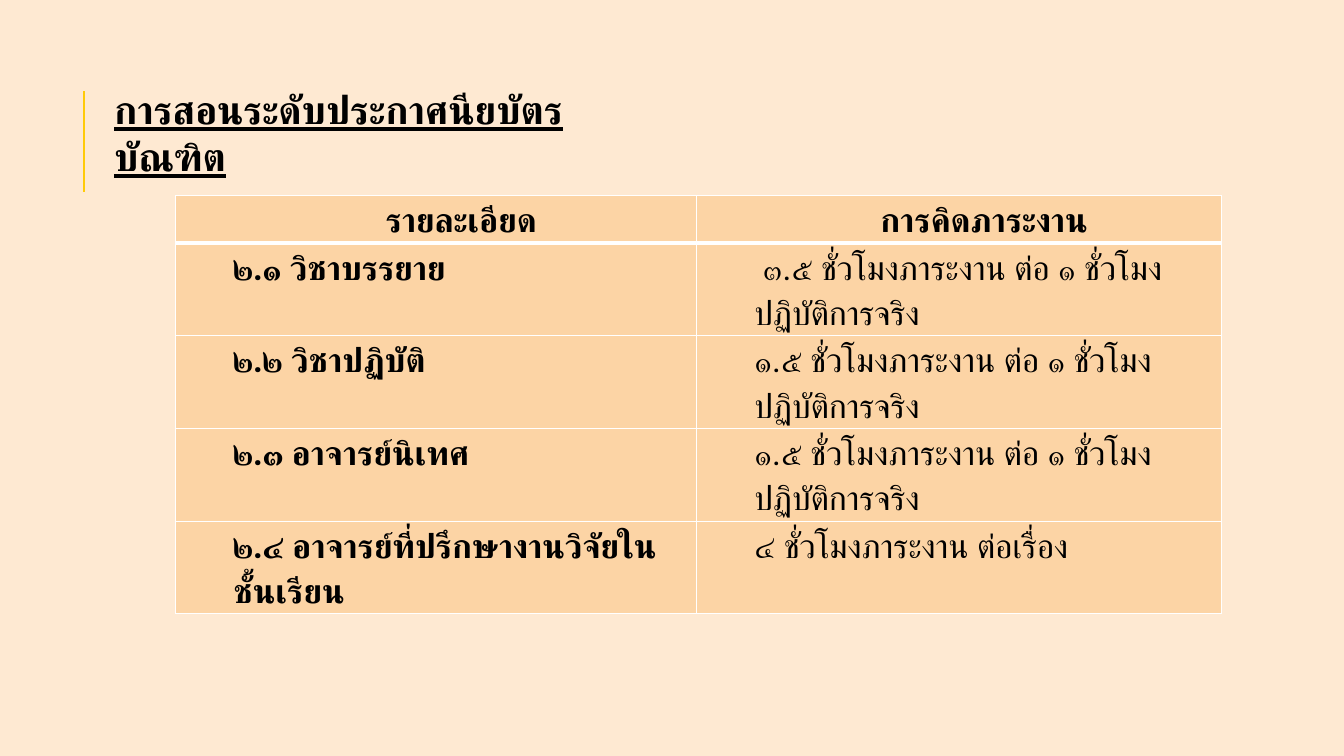
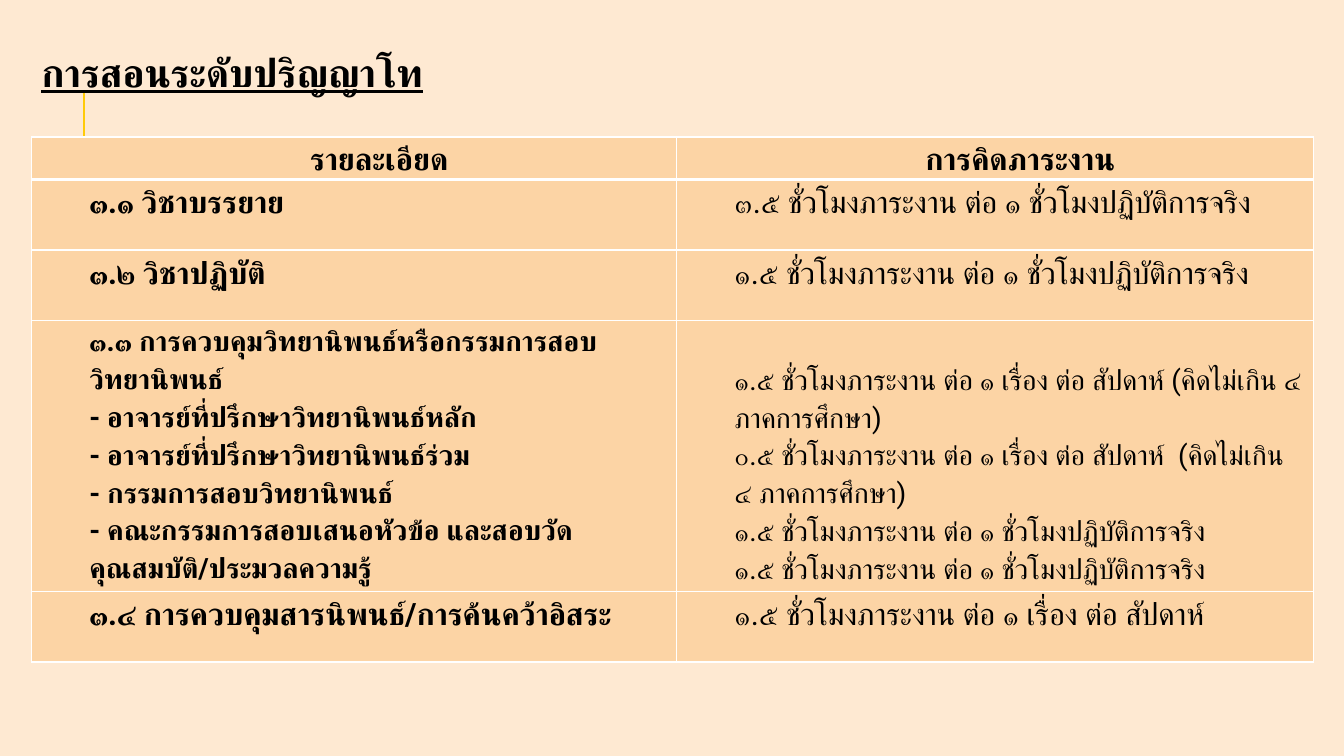
from lxml.etree import SubElement
from pptx import Presentation
from pptx.dml.color import RGBColor as Rgb
from pptx.enum.shapes import MSO_CONNECTOR as Connector
from pptx.enum.text import MSO_ANCHOR as Anchor, MSO_AUTO_SIZE as AutoSize, PP_ALIGN as Align
from pptx.oxml.ns import qn
from pptx.util import Cm, Pt

COLORS = {"page": "FEE9D2", "cell": "FCD4A5", "rule": "FFCA08", "border": "FFFFFF", "text": "000000"}
TITLE_FONT, TABLE_FONT = "Calibri", "Roboto"
HEADINGS = ("รายละเอียด", "การคิดภาระงาน")
PER_LECTURE = "๓.๕ ชั่วโมงภาระงาน ต่อ ๑ ชั่วโมงปฏิบัติการจริง"
PER_PRACTICE = "๑.๕ ชั่วโมงภาระงาน ต่อ ๑ ชั่วโมงปฏิบัติการจริง"
PER_TOPIC = "ชั่วโมงภาระงาน ต่อ ๑ เรื่อง ต่อ สัปดาห์"
TERM_LIMIT = "(คิดไม่เกิน ๔ ภาคการศึกษา)"

CERTIFICATE = {
    "title": "การสอนระดับประกาศนียบัตรบัณฑิต",
    "title_box": (2.62, 2.03, 13.03, 1.45),
    "table_at": (4.42, 4.93),
    "columns": (13.13, 13.23),
    "size": 24,
    "rows": [
        (1.19, *HEADINGS),
        (1.07, "๒.๑ วิชาบรรยาย", " " + PER_LECTURE),
        (1.14, "๒.๒ วิชาปฏิบัติ", PER_PRACTICE),
        (1.35, "๒.๓ อาจารย์นิเทศ", PER_PRACTICE),
        (1.14, "๒.๔ อาจารย์ที่ปรึกษางานวิจัยในชั้นเรียน", "๔ ชั่วโมงภาระงาน ต่อเรื่อง"),
    ],
}
MASTER_DEGREE = {
    "title": "การสอนระดับปริญญาโท",
    "title_box": (0.79, 1.09, 16.94, 1.45),
    "table_at": (0.79, 3.45),
    "columns": (16.26, 16.05),
    "size": 22,
    "detail_row": 3,
    "detail_size": 20,
    "detail_offset": 0.97,
    "rows": [
        (0.89, *HEADINGS),
        (1.78, "๓.๑ วิชาบรรยาย", PER_LECTURE),
        (1.78, "๓.๒ วิชาปฏิบัติ", PER_PRACTICE),
        (5.38,
         "\n".join([
             "๓.๓ การควบคุมวิทยานิพนธ์หรือกรรมการสอบวิทยานิพนธ์",
             "- อาจารย์ที่ปรึกษาวิทยานิพนธ์หลัก",
             "- อาจารย์ที่ปรึกษาวิทยานิพนธ์ร่วม",
             "- กรรมการสอบวิทยานิพนธ์",
             "- คณะกรรมการสอบเสนอหัวข้อ และสอบวัดคุณสมบัติ/ประมวลความรู้",
         ]),
         "\n".join([
             f"๑.๕ {PER_TOPIC} {TERM_LIMIT}",
             f"๐.๕ {PER_TOPIC}  {TERM_LIMIT}",
             PER_PRACTICE,
             PER_PRACTICE,
         ])),
        (1.78, "๓.๔ การควบคุมสารนิพนธ์/การค้นคว้าอิสระ", f"๑.๕ {PER_TOPIC}"),
    ],
}


def color(name):
    """Return the named palette colour."""
    return Rgb.from_string(COLORS[name])


def format_span(span, face, size, bold, underline=False):
    """Give a run its typeface, size and weight for Latin and Thai text."""
    font = span.font
    font.name, font.size, font.bold = face, Pt(size), bold
    font.underline = underline
    font.color.rgb = color("text")
    SubElement(font._element, qn("a:cs"), typeface=face)


def style_layout(deck, layout):
    """Set the shared background and the vertical rule."""
    fill = deck.slide_master.background.fill
    fill.solid()
    fill.fore_color.rgb = color("page")
    page = deck.slides.add_slide(layout)
    rule = page.shapes.add_connector(Connector.STRAIGHT, Cm(2.11), Cm(4.83), Cm(2.11), Cm(2.29))
    rule.line.color.rgb = color("rule")
    rule.line.width = Pt(1.5)
    SubElement(rule.element.spPr, qn("a:effectLst"))
    layout.shapes.element.append(rule.element)
    return page


def place_title(page, text, box):
    """Place the underlined title in its box."""
    title = page.shapes.title
    title.left, title.top, title.width, title.height = map(Cm, box)
    frame = title.text_frame
    frame.text = text
    frame.word_wrap = True
    frame.auto_size = AutoSize.SHAPE_TO_FIT_TEXT
    frame.vertical_anchor = Anchor.TOP
    para = frame.paragraphs[0]
    para.alignment = Align.LEFT
    format_span(para.runs[0], TITLE_FONT, 28, True, True)


def border_cell(cell, is_header):
    """Draw white borders, heavier below the header."""
    properties = cell._tc.get_or_add_tcPr()
    for side in "LRTB":
        width = Pt(3 if is_header and side == "B" else 1)
        line = SubElement(properties, qn(f"a:ln{side}"), w=str(width))
        paint = SubElement(line, qn("a:solidFill"))
        SubElement(paint, qn("a:srgbClr"), val=COLORS["border"])


def fill_cell(cell, text, size, is_header, is_workload):
    """Write and format one table cell."""
    cell.margin_left = cell.margin_right = Cm(0.19)
    cell.margin_top = cell.margin_bottom = 0
    border_cell(cell, is_header)
    cell.fill.solid()
    cell.fill.fore_color.rgb = color("cell")
    cell.text_frame.text = text
    paras = cell.text_frame.paragraphs
    for para in paras:
        para.alignment = Align.CENTER if is_header else Align.LEFT
        para.line_spacing = 1.15
        para._p.get_or_add_pPr().set("marL", str(Cm(1.27)))
        format_span(para.runs[0], TABLE_FONT, size, is_header or not is_workload)
    if is_workload:
        paras[-1].space_after = Pt(10)


def place_table(page, content):
    """Place the workload table at its corner."""
    rows, columns = content["rows"], content["columns"]
    left, top = content["table_at"]
    height = sum(row[0] for row in rows)
    table = page.shapes.add_table(
        len(rows), len(columns), Cm(left), Cm(top), Cm(sum(columns)), Cm(height)).table
    table.first_row = table.horz_banding = False
    for column, width in zip(table.columns, columns):
        column.width = Cm(width)
    detail_row = content.get("detail_row")
    for index, (row_height, *texts) in enumerate(rows):
        table.rows[index].height = Cm(row_height)
        size = content["detail_size"] if index == detail_row else content["size"]
        for position, text in enumerate(texts):
            fill_cell(table.cell(index, position), text, size, index == 0, position == 1)
    if detail_row:
        table.cell(detail_row, 1).margin_top = Cm(content["detail_offset"])


def build_page(page, content):
    """Build a slide with a title and a workload table."""
    place_table(page, content)
    place_title(page, content["title"], content["title_box"])


def main():
    """Build and save the deck."""
    deck = Presentation()
    deck.slide_width, deck.slide_height = Cm(33.87), Cm(19.05)
    layout = deck.slide_layouts[5]
    build_page(style_layout(deck, layout), CERTIFICATE)
    build_page(deck.slides.add_slide(layout), MASTER_DEGREE)
    deck.save("out.pptx")


if __name__ == "__main__":
    main()
